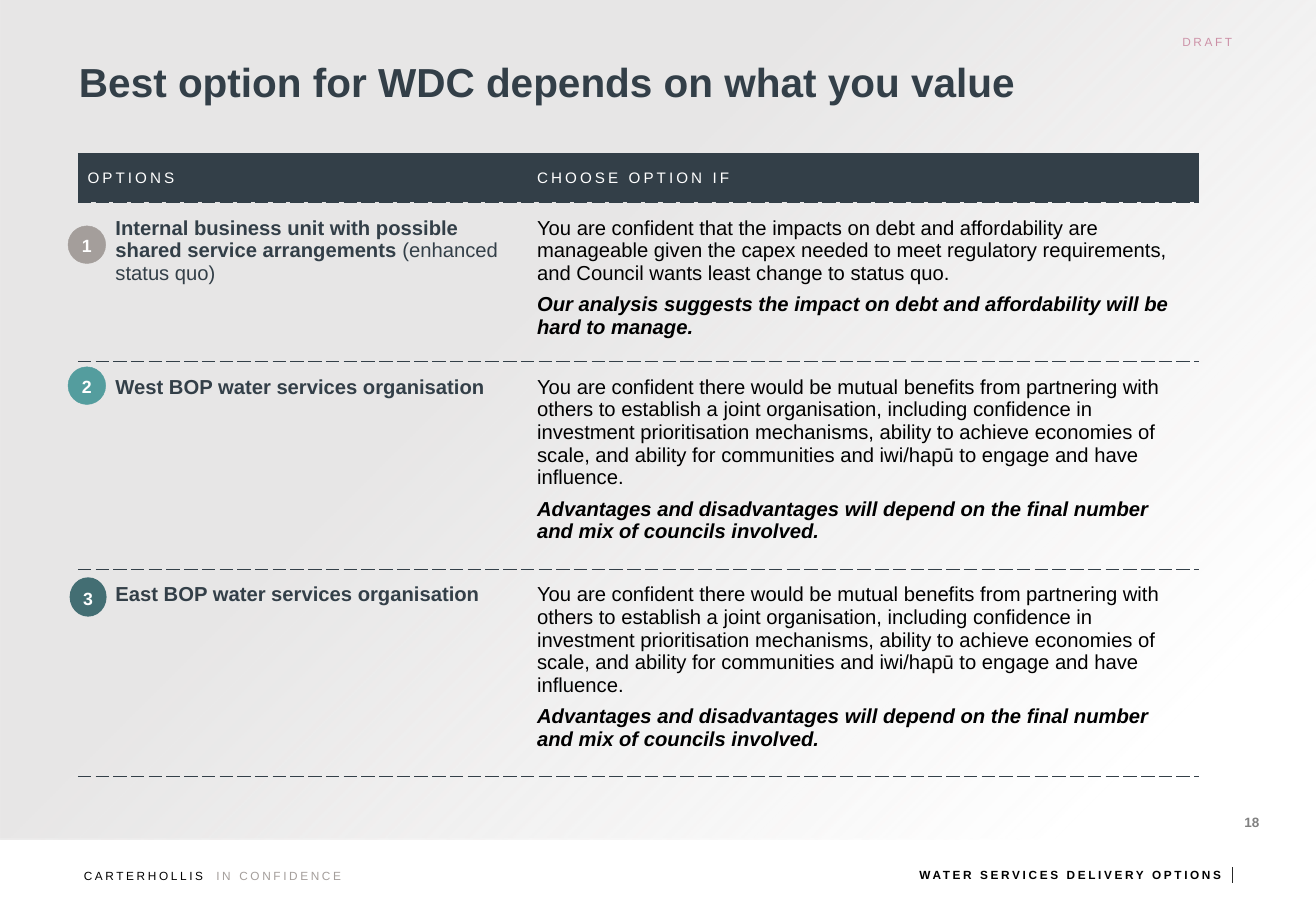
"""Build the slide that compares the water services delivery options."""
from pptx import Presentation
from pptx.dml.color import RGBColor
from pptx.enum.shapes import MSO_CONNECTOR as CONNECTOR, MSO_SHAPE as SHAPE
from pptx.enum.text import MSO_ANCHOR as ANCHOR, PP_ALIGN as ALIGN
from pptx.oxml import parse_xml
from pptx.oxml.ns import nsdecls
from pptx.util import Inches, Pt

NAVY, BLACK, WHITE, STONE = "333F48", "000000", "FFFFFF", "A49E9B"
TITLE = "Best option for WDC depends on what you value"
HEADINGS = ["OPTIONS", "CHOOSE OPTION IF"]
JOINT_REASON = (
    "You are confident there would be mutual benefits from partnering with others to "
    "establish a joint organisation, including confidence in investment prioritisation "
    "mechanisms, ability to achieve economies of scale, and ability for communities and "
    "iwi/hapū to engage and have influence.")
JOINT_CAVEAT = ("Advantages and disadvantages will depend on the final number and mix of "
                "councils involved.")
OPTIONS = [
    ("Internal business unit with possible shared service arrangements ",
     "(enhanced status quo)",
     "You are confident that the impacts on debt and affordability are manageable given "
     "the capex needed to meet regulatory requirements, and Council wants least change "
     "to status quo.",
     "Our analysis suggests the impact on debt and affordability will be hard to manage."),
    ("West BOP water services organisation", "", JOINT_REASON, JOINT_CAVEAT),
    ("East BOP water services organisation", "", JOINT_REASON, JOINT_CAVEAT),
]
BADGES = [
    ("3", (0.58, 4.76, 0.29, 0.31), "436E73"),
    ("2", (0.56, 3.02, 0.31, 0.31), "549D9E"),
    ("1", (0.56, 1.86, 0.31, 0.31), STONE),
]
MARGINALIA = [
    ("CARTERHOLLIS", (0.69, 7.13, 1.06, 0.16), BLACK, None, ALIGN.LEFT),
    ("IN CONFIDENCE", (1.78, 7.13, 2.01, 0.16), STONE, None, ALIGN.LEFT),
    ("DRAFT", (9.08, 0.23, 1.06, 0.23), "A6154B", None, ALIGN.RIGHT),
    ("WATER SERVICES DELIVERY OPTIONS", (4.14, 7.12, 5.91, 0.16), BLACK, True, ALIGN.RIGHT),
]
COLUMN_WIDTHS = [3.7, 5.53]
ROW_HEIGHTS = [0.4, 1.26, 1.61, 1.61]
HEADING_INSETS = (0.08, 0.12, 0.08, 0.12)
OPTION_INSETS = (0.31, 0.12, 0.04, 0.12)
REASON_INSETS = (0.08, 0.12, 0.12, 0.12)
NO_STYLE = "{2D5ABB26-0587-4C30-8999-92F81FD0307C}"

deck = Presentation()
deck.slide_width, deck.slide_height = Inches(10.83), Inches(7.5)
slide = deck.slides.add_slide(deck.slide_layouts[6])


def rgb(code):
    return RGBColor.from_string(code)


def inches(lengths):
    return [Inches(length) for length in lengths]


def style(paragraph, size, color, bold=None, italic=None, spacing=0, leading=None,
          align=None):
    font = paragraph.font
    font.name, font.size, font.bold, font.italic = "Arial", Pt(size), bold, italic
    font.color.rgb = rgb(color)
    if spacing:
        paragraph._p.get_or_add_pPr().get_or_add_defRPr().set("spc", str(int(spacing * 100)))
    paragraph._p.append(parse_xml(f'<a:endParaRPr {nsdecls("a")} sz="{int(size * 100)}"/>'))
    paragraph.line_spacing, paragraph.alignment = leading, align


def set_insets(holder, insets):
    (holder.margin_left, holder.margin_top,
     holder.margin_right, holder.margin_bottom) = inches(insets)


def write(shape, text, size, color, **look):
    frame = shape.text_frame
    frame.word_wrap, frame.vertical_anchor = True, ANCHOR.MIDDLE
    set_insets(frame, (0, 0, 0, 0))
    frame.text = text
    style(frame.paragraphs[0], size, color, **look)
    return frame.paragraphs[0]


def add_label(place, *content, **look):
    write(slide.shapes.add_textbox(*inches(place)), *content, **look)


def add_backdrop():
    backdrop = slide.shapes.add_shape(SHAPE.RECTANGLE, *inches((0, 0, 10.83, 6.91)))
    backdrop.shadow.inherit = False
    backdrop.line.fill.background()
    backdrop.fill.background()
    properties = backdrop._element.spPr
    gray = '<a:gs pos="{}"><a:srgbClr val="E7E6E6">{}</a:srgbClr></a:gs>'
    stops = "".join(gray.format(position * 1000, alpha) for position, alpha in
                    [(0, ""), (37, ""), (88, '<a:alpha val="0"/>')])
    gradient = parse_xml(
        f'<a:gradFill {nsdecls("a")} rotWithShape="1"><a:gsLst>{stops}</a:gsLst>'
        '<a:path path="circle"><a:fillToRect r="100000" b="100000"/></a:path>'
        '<a:tileRect l="-100000" t="-100000"/></a:gradFill>')
    properties.replace(properties.find("{*}noFill"), gradient)


def finish_cell(cell, insets, fill=None):
    set_insets(cell, insets)
    if fill:
        cell.fill.solid()
        cell.fill.fore_color.rgb = rgb(fill)
    else:
        cell.fill.background()
    for position, edge in enumerate(("lnT", "lnB")):
        cell._tc.get_or_add_tcPr().insert(position, parse_xml(
            f'<a:{edge} {nsdecls("a")} w="3175"><a:solidFill><a:srgbClr val="{NAVY}"/>'
            f'</a:solidFill><a:prstDash val="dash"/></a:{edge}>'))


def add_options_table():
    place = (0.64, 1.26, sum(COLUMN_WIDTHS), sum(ROW_HEIGHTS))
    table = slide.shapes.add_table(len(ROW_HEIGHTS), len(COLUMN_WIDTHS), *inches(place)).table
    table.first_row = table.horz_banding = False
    table._tbl.tblPr.find("{*}tableStyleId").text = NO_STYLE
    for column, width in zip(table.columns, COLUMN_WIDTHS):
        column.width = Inches(width)
    for row, height in zip(table.rows, ROW_HEIGHTS):
        row.height = Inches(height)

    for column, heading in enumerate(HEADINGS):
        cell = table.cell(0, column)
        cell.text = heading
        style(cell.text_frame.paragraphs[0], 9, WHITE, spacing=1.8, leading=1.1)
        finish_cell(cell, HEADING_INSETS, NAVY)

    for row, (option, remark, reason, caveat) in enumerate(OPTIONS, 1):
        option_cell, reason_cell = table.cell(row, 0), table.cell(row, 1)
        name = option_cell.text_frame.paragraphs[0]
        if remark:
            for text, bold in ((option, True), (remark, False)):
                run = name.add_run()
                run.text, run.font.bold = text, bold
            style(name, 12, NAVY)
        else:
            name.text = option
            style(name, 12, NAVY, bold=True)
        finish_cell(option_cell, OPTION_INSETS)

        reason_cell.text = f"{reason}\n{caveat}"
        first, second = reason_cell.text_frame.paragraphs
        style(first, 12, BLACK)
        style(second, 12, BLACK, bold=True, italic=True)
        first.space_after = second.space_after = Pt(2)
        second.space_before = Pt(3)
        finish_cell(reason_cell, REASON_INSETS)


def add_badge(number, place, color):
    badge = slide.shapes.add_shape(SHAPE.OVAL, *inches(place))
    badge.shadow.inherit = False
    badge.fill.solid()
    badge.fill.fore_color.rgb = rgb(color)
    badge.line.color.rgb = rgb(color)
    badge.line.width = Pt(1 if number == "3" else 0.25)
    label = write(badge, number, 10.5, WHITE, bold=True, spacing=1.8, leading=1.1,
                  align=ALIGN.CENTER)
    label.space_after = Pt(3)


for text, place, color, bold, align in MARGINALIA:
    add_label(place, text, 7, color, bold=bold, spacing=1.6, leading=Pt(8.5), align=align)
footer_rule = slide.shapes.add_connector(CONNECTOR.STRAIGHT, *inches((10.14, 7.14, 10.14, 7.27)))
footer_rule.line.color.rgb = rgb("262626")
footer_rule.line.width = Pt(0.5)
footer_rule._element.spPr.append(parse_xml(f'<a:effectLst {nsdecls("a")}/>'))
add_backdrop()
add_label((10.24, 6.69, 0.26, 0.16), "18", 8, "808080", bold=True)
add_label((0.65, 0.1, 9.31, 1.19), TITLE, 24, NAVY, bold=True, leading=0.9)
add_options_table()
for badge in BADGES:
    add_badge(*badge)
deck.save("out.pptx")
